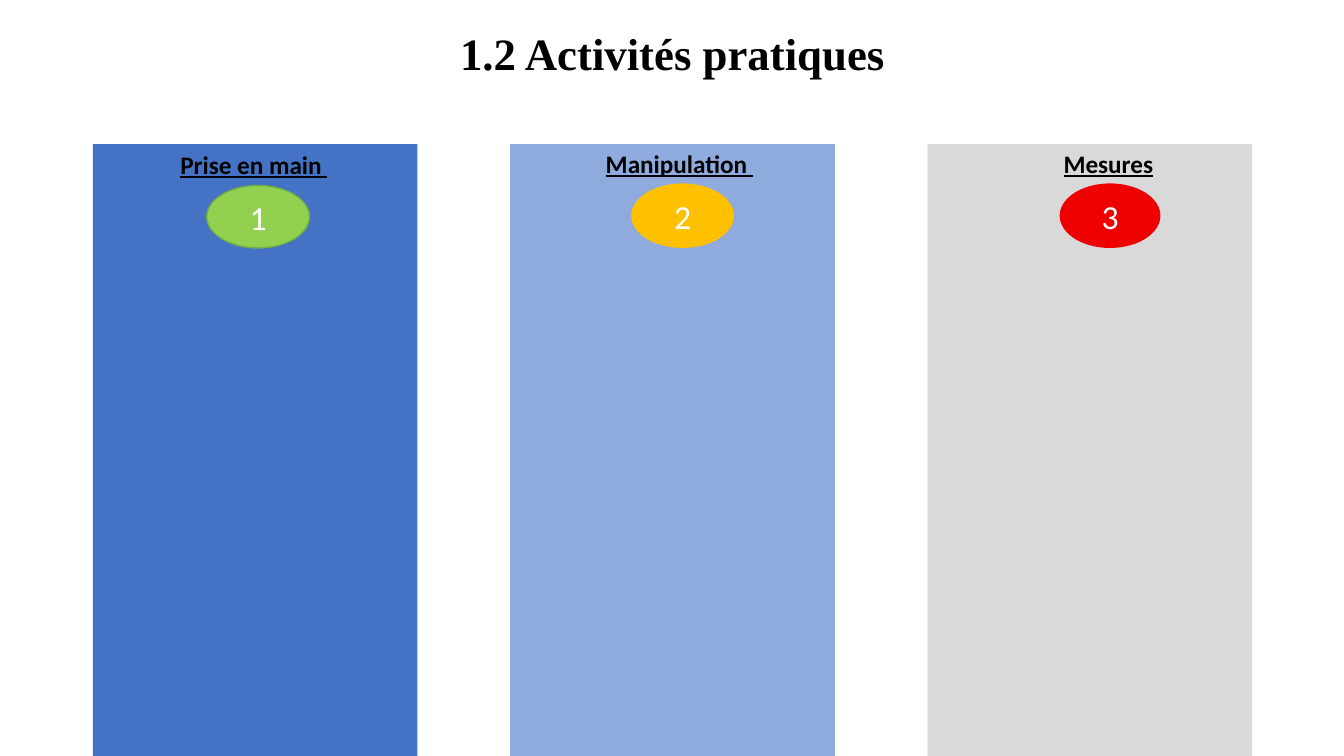
from pptx import Presentation
from pptx.dml.color import RGBColor
from pptx.enum.shapes import MSO_SHAPE
from pptx.enum.text import MSO_ANCHOR, MSO_AUTO_SIZE, PP_ALIGN
from pptx.util import Inches, Pt

COLORS = {
    "blue": "4472C4", "light_blue": "8FAADC", "grey": "D9D9D9",
    "green": "92D050", "green_edge": "70AD47", "amber": "FFC000",
    "red": "EE0000", "black": "000000", "white": "FFFFFF",
}


def rgb(name):
    return RGBColor.from_string(COLORS[name])


def add_filled(shapes, kind, box, fill, edge=None):
    sp = shapes.add_shape(kind, *[Inches(v) for v in box])
    sp.shadow.inherit = False
    sp.fill.solid()
    sp.fill.fore_color.rgb = rgb(fill)
    if edge:
        sp.line.color.rgb = rgb(edge)
        sp.line.width = Pt(1)
    else:
        sp.line.fill.background()
    return sp


prs = Presentation()
prs.slide_width, prs.slide_height = Inches(13.33), Inches(7.5)
s = prs.slides.add_slide(prs.slide_layouts[5])

# Title
title = s.shapes.title
title.left, title.top = Inches(0.92), Inches(0.13)
title.width, title.height = Inches(11.5), Inches(0.85)
tf = title.text_frame
tf.text = "1.2 Activités pratiques"
tf.vertical_anchor = MSO_ANCHOR.MIDDLE
p = tf.paragraphs[0]
p.alignment = PP_ALIGN.CENTER
p.line_spacing = 0.9
font = p.runs[0].font
font.name, font.size, font.bold = "Times New Roman", Pt(32), True
font.color.rgb = rgb("black")

# Columns: panel colour, badge colour, badge edge, badge box, heading, heading box
columns = [
    ("blue", "green", "green_edge", (2.05, 1.84, 1.02, 0.62),
     "Prise en main ", (1.69, 1.43, 1.67, 0.4)),
    ("light_blue", "amber", None, (6.26, 1.82, 1.02, 0.64),
     "Manipulation ", (5.91, 1.42, 1.73, 0.4)),
    ("grey", "red", None, (10.51, 1.82, 1, 0.64),
     "Mesures", (10.45, 1.42, 1.13, 0.38)),
]
for i, (panel, fill, edge, badge_box, heading, heading_box) in enumerate(columns):
    add_filled(s.shapes, MSO_SHAPE.RECTANGLE,
               (0.92 + i * 4.14, 1.43, 3.22, 6.07), panel)
    group = s.shapes.add_group_shape()

    # Numbered badge
    badge = add_filled(group.shapes, MSO_SHAPE.OVAL, badge_box, fill, edge)
    tf = badge.text_frame
    tf.text = str(i + 1)
    tf.vertical_anchor = MSO_ANCHOR.MIDDLE
    p = tf.paragraphs[0]
    p.alignment = PP_ALIGN.CENTER
    font = p.runs[0].font
    font.name, font.size = "Calibri", Pt(24)
    font.color.rgb = rgb("white")

    # Heading
    label = group.shapes.add_textbox(*[Inches(v) for v in heading_box])
    tf = label.text_frame
    tf.word_wrap = False
    tf.auto_size = MSO_AUTO_SIZE.SHAPE_TO_FIT_TEXT
    tf.text = heading
    font = tf.paragraphs[0].runs[0].font
    font.name, font.size = "Calibri", Pt(18)
    font.bold = font.underline = True
    font.color.rgb = rgb("black")

prs.save("out.pptx")
